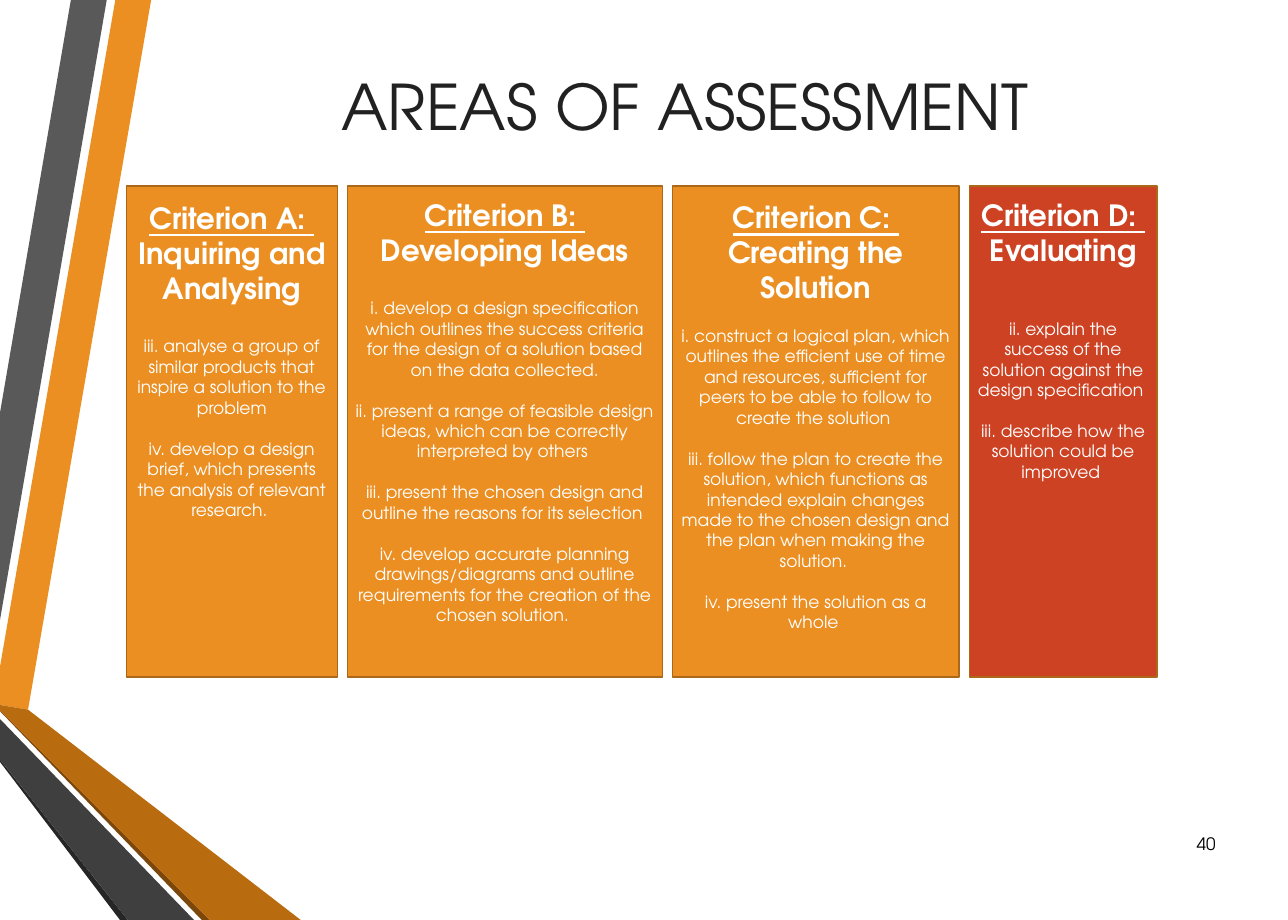
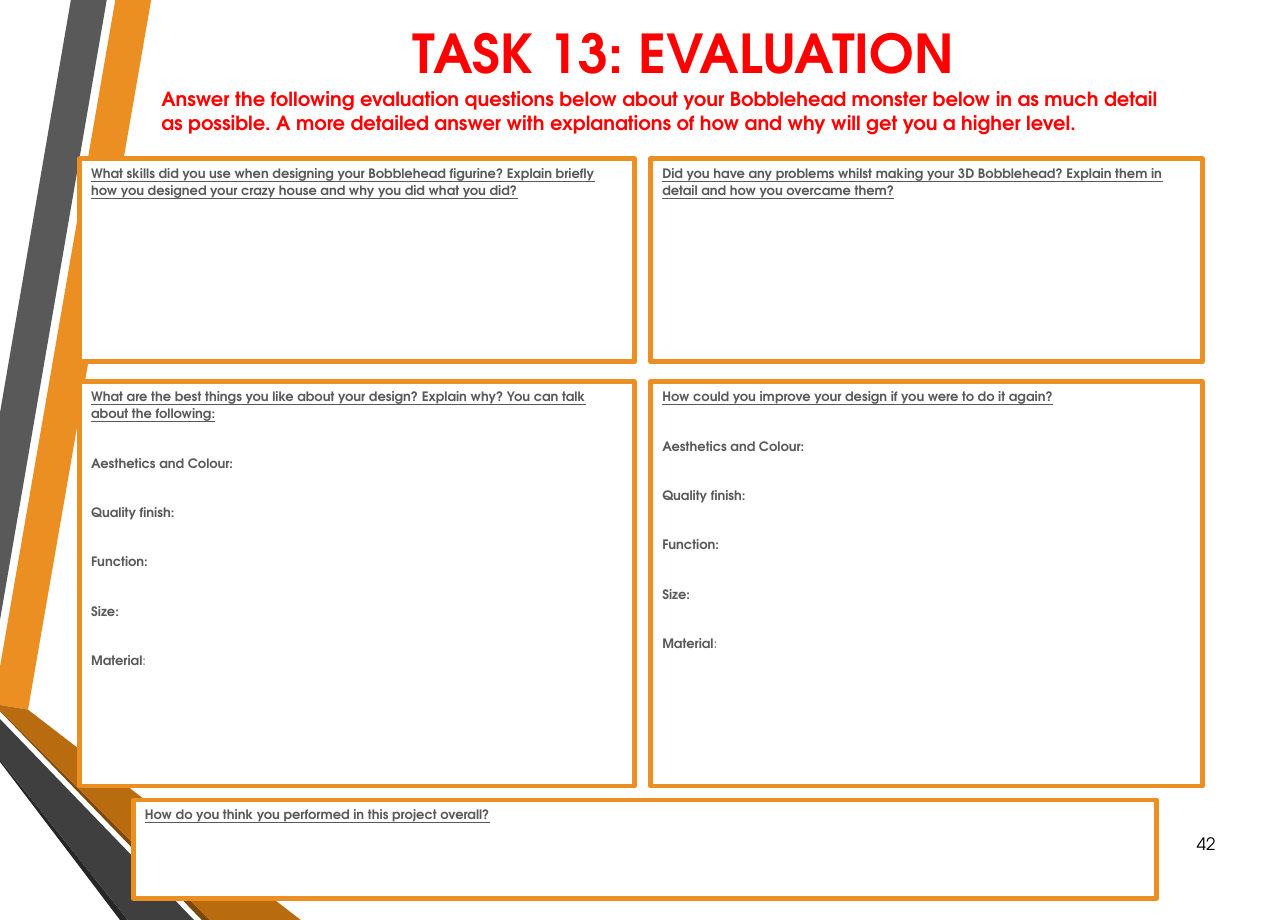
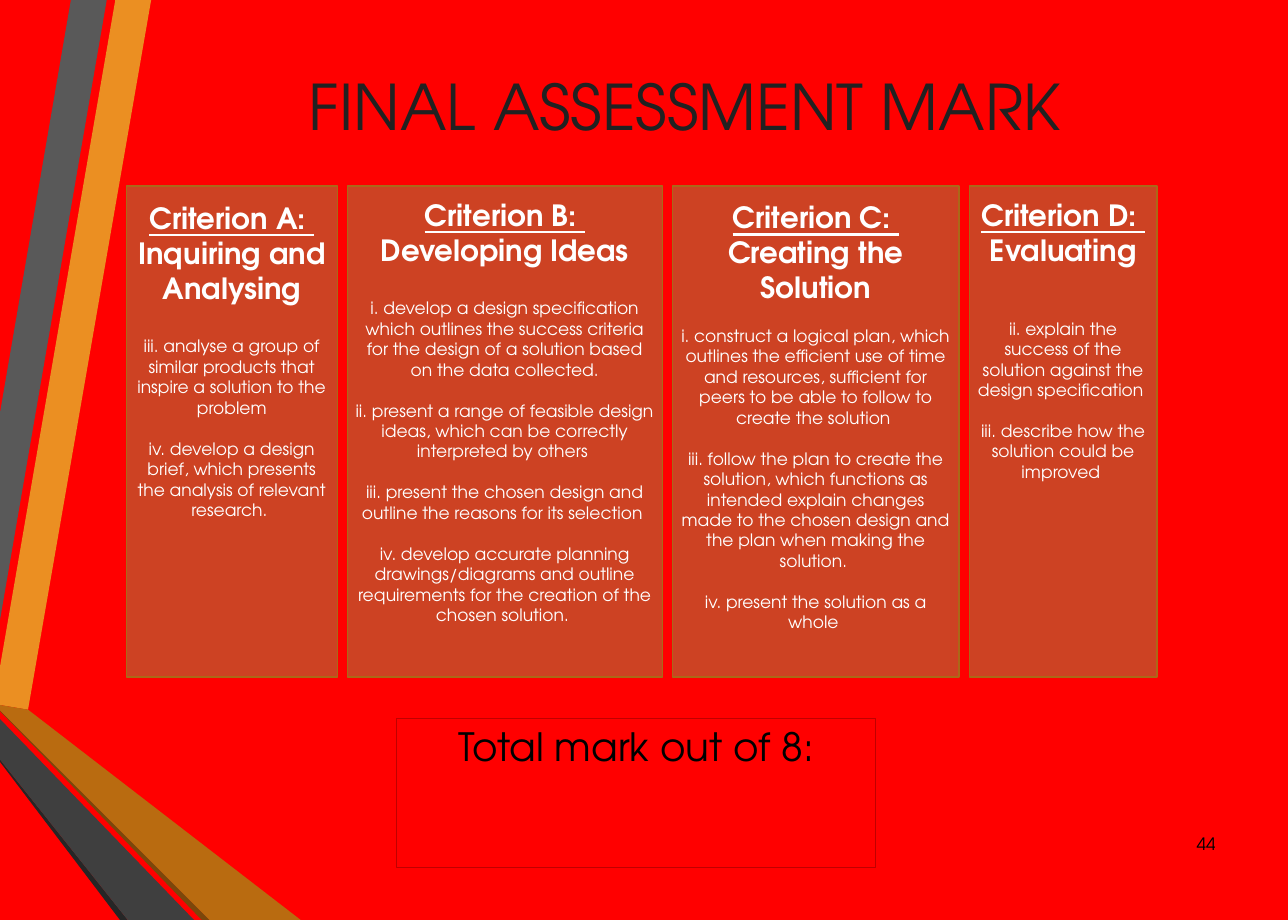
from dataclasses import dataclass, replace

import pptx
import pptx.dml.color
import pptx.enum.shapes
import pptx.enum.text
import pptx.oxml
import pptx.oxml.ns
import pptx.presentation
import pptx.shapes.autoshape
import pptx.slide
import pptx.text.text
import pptx.util

RGBColor = pptx.dml.color.RGBColor
Inches = pptx.util.Inches
Pt = pptx.util.Pt
ALIGN = pptx.enum.text.PP_ALIGN
ANCHOR = pptx.enum.text.MSO_ANCHOR

# Shared look
FONT = "TeX Gyre Adventor"
ORANGE = RGBColor(0xEB, 0x8F, 0x22)
DARK_ORANGE = RGBColor(0xB9, 0x6B, 0x10)
BROWN = RGBColor(0x7B, 0x47, 0x0B)
CARD_EDGE = RGBColor(0xAB, 0x68, 0x18)
BRICK = RGBColor(0xCD, 0x42, 0x23)
RED = RGBColor(0xFF, 0x00, 0x00)
DARK_RED = RGBColor(0xC0, 0x00, 0x00)
GREY = RGBColor(0x59, 0x59, 0x59)
DARK_GREY = RGBColor(0x3F, 0x3F, 0x3F)
CHARCOAL = RGBColor(0x26, 0x26, 0x26)
INK = RGBColor(0x21, 0x21, 0x21)
BLACK = RGBColor(0x00, 0x00, 0x00)
WHITE = RGBColor(0xFF, 0xFF, 0xFF)

NARROW = (0.1, 0.05)
WIDE = (0.15, 0.07)
LAYOUT_BODY, LAYOUT_TITLE = 1, 5


@dataclass(frozen=True)
class Style:
    size: float
    color: RGBColor
    bold: bool = False
    underline: bool = False
    align: ALIGN = ALIGN.CENTER
    spacing: float = 1.0


@dataclass(frozen=True)
class Line:
    text: str
    style: Style
    gap: float = 0  # points above the paragraph
    light_tail: str = ""  # ending that is not bold


@dataclass(frozen=True)
class Box:
    left: float
    top: float
    width: float
    height: float


@dataclass(frozen=True)
class Band:
    color: RGBColor
    points: tuple[tuple[float, float], ...]


@dataclass(frozen=True)
class Criterion:
    letter: str
    name: str
    width: float
    inset: float
    gap: float  # points between heading and first strand
    strands: tuple[str, ...]


@dataclass(frozen=True)
class Question:
    box: Box
    text: str
    prompts: tuple[str, ...] = ()


TITLE = Style(58.1, INK, spacing=0.9)
TASK_TITLE = Style(49.5, RED, bold=True)
INSTRUCTION = Style(18, RED, bold=True, align=ALIGN.LEFT)
NUMBER = Style(15.8, BLACK, align=ALIGN.RIGHT)
HEADING = Style(27, WHITE, bold=True)
STRAND = Style(15.8, WHITE)
PROMPT = Style(12, GREY, bold=True, align=ALIGN.LEFT, spacing=1.1)
TOTAL = Style(36, BLACK)

BANDS = (
    Band(ORANGE, ((0, 8.56), (0, 9.05), (0.36, 9.11), (1.94, 0), (1.48, 0))),
    Band(GREY, ((1.37, 0), (0.91, 0), (0, 5.3), (0, 7.96))),
    Band(CHARCOAL, ((0, 9.75), (0, 9.78), (1.54, 11.81), (1.64, 11.81))),
    Band(BROWN, ((0, 9.12), (0, 9.13), (2.59, 11.81), (2.69, 11.81))),
    Band(DARK_ORANGE, ((0, 9.12), (2.69, 11.81), (3.86, 11.81), (0.36, 9.11), (0, 9.05))),
    Band(DARK_GREY, ((0, 9.75), (1.64, 11.81), (2.49, 11.81), (0, 9.23))),
)

CRITERIA = (
    Criterion("A", "Inquiring and Analysing", 2.71, 0.18, 28, (
        "iii. analyse a group of similar products that inspire a solution to the problem",
        "iv. develop a design brief, which presents the analysis of relevant research. ",
    )),
    Criterion("B", "Developing Ideas", 4.04, 0.14, 28, (
        "i. develop a design specification which outlines the success criteria "
        "for the design of a solution based on the data collected.",
        "ii. present a range of feasible design ideas, which can be correctly "
        "interpreted by others ",
        "iii. present the chosen design and outline the reasons for its selection ",
        "iv. develop accurate planning drawings/diagrams and outline requirements "
        "for the creation of the chosen solution. ",
    )),
    Criterion("C", "Creating the Solution", 3.68, 0.17, 18.9, (
        "i. construct a logical plan, which outlines the efficient use of time and "
        "resources, sufficient for peers to be able to follow to create the solution ",
        "iii. follow the plan to create the solution, which functions as intended "
        "explain changes made to the chosen design and the plan when making the solution. ",
        "iv. present the solution as a whole ",
    )),
    Criterion("D", "Evaluating", 2.41, 0.14, 46.9, (
        "ii. explain the success of the solution against the design specification ",
        "iii. describe how the solution could be improved ",
    )),
)
CARD_LEFT, CARD_TOP, CARD_HEIGHT, CARD_GAP = 1.62, 2.39, 6.3, 0.13
STRAND_GAP = 18.9

ASPECTS = ("Aesthetics and Colour:", "Quality finish:", "Function:", "Size:", "Material:")
PROMPT_GAP = 29.8
QUESTIONS = (
    Question(Box(1.02, 4.9, 7.12, 5.19),
             "What are the best things you like about your design? Explain why? "
             "You can talk about the following:", ASPECTS),
    Question(Box(8.35, 4.9, 7.08, 5.19),
             "How could you improve your design if you were to do it again?", ASPECTS),
    Question(Box(1.02, 2.04, 7.12, 2.6),
             "What skills did you use when designing your Bobblehead figurine? Explain "
             "briefly how you designed your crazy house and why you did what you did?"),
    Question(Box(8.35, 2.04, 7.08, 2.6),
             "Did you have any problems whilst making your 3D Bobblehead? Explain them "
             "in detail and how you overcame them?"),
    Question(Box(1.71, 10.27, 13.13, 1.26),
             "How do you think you performed in this project overall?"),
)


def write(tf: pptx.text.text.TextFrame, lines: list[Line],
          inset: tuple[float, float] = NARROW, anchor: ANCHOR = ANCHOR.TOP) -> None:
    """Fill a text frame, one paragraph per line."""
    tf.word_wrap = True
    tf.auto_size = pptx.enum.text.MSO_AUTO_SIZE.NONE
    tf.vertical_anchor = anchor
    tf.margin_left = tf.margin_right = Inches(inset[0])
    tf.margin_top = tf.margin_bottom = Inches(inset[1])
    for i, line in enumerate(lines):
        p = tf.add_paragraph() if i else tf.paragraphs[0]
        p.text = line.text
        if line.light_tail:
            p.add_run().text = line.light_tail
        style = line.style
        p.alignment = style.align
        p.line_spacing = style.spacing
        p.space_before = Pt(line.gap)
        for j, r in enumerate(p.runs):
            r.font.name = FONT
            r.font.size = Pt(style.size)
            r.font.color.rgb = style.color
            r.font.bold = style.bold and j == 0
            r.font.underline = style.underline


def place(sp: pptx.shapes.autoshape.Shape, box: Box) -> None:
    sp.left, sp.top = Inches(box.left), Inches(box.top)
    sp.width, sp.height = Inches(box.width), Inches(box.height)


def add_box(s: pptx.slide.Slide, box: Box, fill: RGBColor | None,
            edge: RGBColor, weight: float) -> pptx.shapes.autoshape.Shape:
    sp = s.shapes.add_shape(pptx.enum.shapes.MSO_SHAPE.RECTANGLE, 0, 0, 0, 0)
    place(sp, box)
    sp.shadow.inherit = False
    if fill is None:
        sp.fill.background()
    else:
        sp.fill.solid()
        sp.fill.fore_color.rgb = fill
    sp.line.color.rgb = edge
    sp.line.width = Pt(weight)
    return sp


def add_bands(prs: pptx.presentation.Presentation, s: pptx.slide.Slide) -> None:
    """Draw the side bands and hand them to the slide master."""
    tree = prs.slide_master.shapes.element
    for i, band in enumerate(BANDS):
        start, *rest = [(Inches(x), Inches(y)) for x, y in band.points]
        builder = s.shapes.build_freeform(*start)
        builder.add_line_segments(rest, close=True)
        sp = builder.convert_to_shape()
        sp.name = f"Band {i + 1}"
        sp.shadow.inherit = False
        sp.fill.solid()
        sp.fill.fore_color.rgb = band.color
        sp.line.fill.background()
        sp.element.nvSpPr.cNvPr.set("id", str(101 + i))
        tree.insert(2 + i, sp.element)


def add_slide(prs: pptx.presentation.Presentation, layout: int, number: int,
              background: RGBColor = WHITE) -> pptx.slide.Slide:
    s = prs.slides.add_slide(prs.slide_layouts[layout])
    s.background.fill.solid()
    s.background.fill.fore_color.rgb = background
    sp = s.shapes.add_textbox(0, 0, 0, 0)
    place(sp, Box(14.93, 10.52, 0.77, 0.63))
    write(sp.text_frame, [Line(str(number), NUMBER)], anchor=ANCHOR.MIDDLE)
    return s


def add_criteria(s: pptx.slide.Slide, title: str, red_letters: str) -> None:
    """Add the title and a row of criterion cards."""
    place(s.shapes.title, Box(2.21, 0.91, 13.15, 1.29))
    write(s.shapes.title.text_frame, [Line(title, TITLE)], WIDE)
    left = CARD_LEFT
    for c in CRITERIA:
        fill = BRICK if c.letter in red_letters else ORANGE
        sp = add_box(s, Box(left, CARD_TOP, c.width, CARD_HEIGHT), fill, CARD_EDGE, 1.25)
        lines = [Line(f"Criterion {c.letter}: ", replace(HEADING, underline=True)),
                 Line(c.name, HEADING)]
        lines += [Line(text, STRAND, STRAND_GAP if i else c.gap)
                  for i, text in enumerate(c.strands)]
        write(sp.text_frame, lines, (NARROW[0], c.inset))
        left += c.width + CARD_GAP


def add_evaluation(s: pptx.slide.Slide) -> None:
    place(s.shapes.title, Box(1.71, 0.11, 14.13, 1.13))
    write(s.shapes.title.text_frame, [Line("TASK 13: EVALUATION", TASK_TITLE)],
          anchor=ANCHOR.MIDDLE)

    # Instruction without a bullet
    body = s.placeholders[1]
    place(body, Box(1.97, 0.91, 13.16, 1.02))
    write(body.text_frame, [Line(
        "Answer the following evaluation questions below about your Bobblehead monster "
        "below in as much detail as possible. A more detailed answer with explanations "
        "of how and why will get you a higher level.", INSTRUCTION)], anchor=ANCHOR.MIDDLE)
    props = body.text_frame.paragraphs[0]._p.get_or_add_pPr()
    props.set("marL", "0")
    props.set("indent", "0")
    props.append(pptx.oxml.parse_xml(f'<a:buNone {pptx.oxml.ns.nsdecls("a")}/>'))

    # Answer boxes
    for q in QUESTIONS:
        sp = add_box(s, q.box, WHITE, ORANGE, 4.5)
        lines = [Line(q.text, replace(PROMPT, underline=True))]
        for prompt in q.prompts:
            tail = ":" if prompt == q.prompts[-1] else ""
            lines.append(Line(prompt.removesuffix(tail), PROMPT, PROMPT_GAP, tail))
        write(sp.text_frame, lines, WIDE)


def main() -> None:
    prs = pptx.Presentation()
    prs.slide_width, prs.slide_height = Inches(16.53), Inches(11.81)

    s = add_slide(prs, LAYOUT_TITLE, 40)
    add_bands(prs, s)
    add_criteria(s, "AREAS OF ASSESSMENT", red_letters="D")

    add_evaluation(add_slide(prs, LAYOUT_BODY, 42))

    s = add_slide(prs, LAYOUT_TITLE, 44, RED)
    add_criteria(s, "FINAL ASSESSMENT MARK", red_letters="ABCD")
    sp = add_box(s, Box(5.09, 9.22, 6.15, 1.92), None, DARK_RED, 0.75)
    write(sp.text_frame, [Line("Total mark out of 8:", TOTAL)])

    prs.save("out.pptx")


if __name__ == "__main__":
    main()
